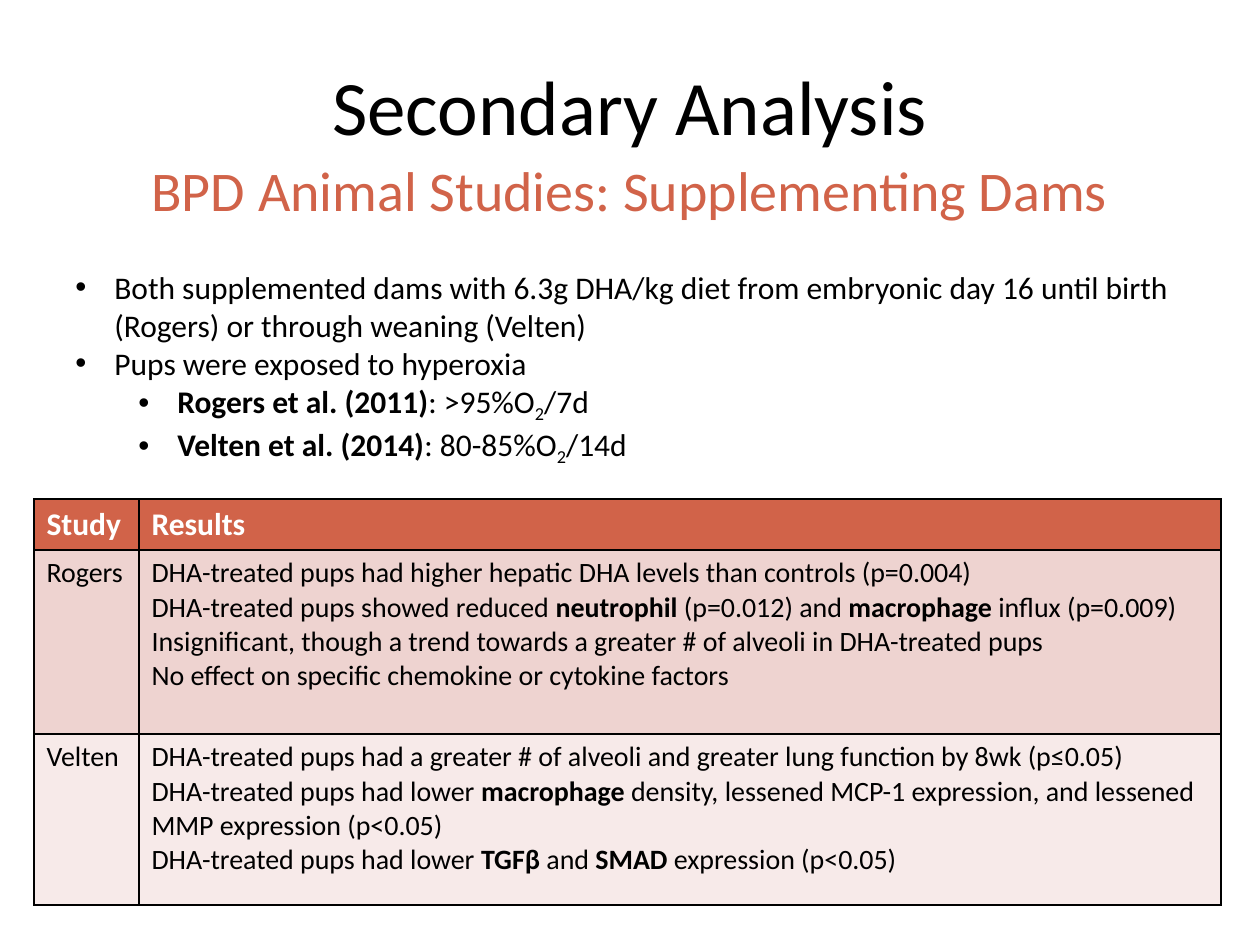
"""Build the Secondary Analysis slide on supplementing dams in BPD animal studies."""
from dataclasses import dataclass

from lxml.etree import SubElement
from pptx import Presentation
from pptx.dml.color import RGBColor
from pptx.enum.text import MSO_ANCHOR as Anchor, PP_ALIGN as Align
from pptx.oxml.ns import qn
from pptx.util import Emu, Pt

EMU_PER_PX = 914400 / 126
FONT = "Calibri"
BLACK = RGBColor(0x00, 0x00, 0x00)
WHITE = RGBColor(0xFF, 0xFF, 0xFF)
RUST = RGBColor(0xD1, 0x63, 0x49)
ROSE = RGBColor(0xEE, 0xD3, 0xD0)
BLUSH = RGBColor(0xF7, 0xEA, 0xE9)


@dataclass(frozen=True)
class Span:
    text: str
    bold: bool = False
    subscript: bool = False


@dataclass(frozen=True)
class Style:
    size: int
    color: RGBColor = BLACK
    align: Align = Align.LEFT


@dataclass(frozen=True)
class Box:
    left: int
    top: int
    width: int
    height: int


@dataclass(frozen=True)
class Line:
    spans: tuple[Span, ...]
    level: int = 0


@dataclass(frozen=True)
class Row:
    height: int
    fill: RGBColor
    style: Style
    study: Line
    results: tuple[Line, ...]


def px(length: int) -> Emu:
    return Emu(round(length * EMU_PER_PX))


def plain(text: str) -> Line:
    return Line((Span(text),))


def bold(text: str) -> Line:
    return Line((Span(text, bold=True),))


def exposure(study: str, oxygen: str, days: str) -> Line:
    spans = (Span(study, bold=True), Span(f": {oxygen}O"), Span("2", subscript=True), Span(f"/{days}"))
    return Line(spans, level=1)


TITLE = Box(63, 39, 1134, 131)
SUBTITLE = Box(63, 149, 1134, 87)
METHODS = Box(63, 262, 1134, 204)
TABLE = Box(34, 499, 1187, 406)
COLUMN_WIDTHS = (105, 1082)
BULLET_HANG = 39
LEVEL_INDENT = 63

METHOD_LINES = (
    plain("Both supplemented dams with 6.3g DHA/kg diet from embryonic day 16 until birth "
          "(Rogers) or through weaning (Velten)"),
    plain("Pups were exposed to hyperoxia"),
    exposure("Rogers et al. (2011)", ">95%", "7d"),
    exposure("Velten et al. (2014)", "80-85%", "14d"),
)

ROWS = (
    Row(51, RUST, Style(18, WHITE), bold("Study"), (bold("Results"),)),
    Row(184, ROSE, Style(16), plain("Rogers"), (
        plain("DHA-treated pups had higher hepatic DHA levels than controls (p=0.004)"),
        Line((Span("DHA-treated pups showed reduced "), Span("neutrophil ", bold=True),
              Span("(p=0.012) and "), Span("macrophage", bold=True), Span(" influx (p=0.009)"))),
        plain("Insignificant, though a trend towards a greater # of alveoli in DHA-treated pups"),
        plain("No effect on specific chemokine or cytokine factors"),
    )),
    Row(171, BLUSH, Style(16), plain("Velten"), (
        plain("DHA-treated pups had a greater # of alveoli and greater lung function by 8wk (p≤0.05)"),
        Line((Span("DHA-treated pups had lower "), Span("macrophage", bold=True),
              Span(" density, lessened MCP-1 expression, and lessened MMP expression (p<0.05)"))),
        Line((Span("DHA-treated pups had lower "), Span("TGFβ", bold=True), Span(" and "),
              Span("SMAD", bold=True), Span(" expression (p<0.05)"))),
    )),
)


def add_bullet(paragraph, level: int) -> None:
    paragraph.level = level
    properties = paragraph._p.get_or_add_pPr()
    properties.set("marL", str(px(BULLET_HANG + level * LEVEL_INDENT)))
    properties.set("indent", str(-px(BULLET_HANG)))
    SubElement(properties, qn("a:buFont"), typeface="Arial")
    SubElement(properties, qn("a:buChar"), char="•")


def write_lines(frame, lines: tuple[Line, ...], style: Style, bulleted: bool = False) -> None:
    for index, line in enumerate(lines):
        paragraph = frame.add_paragraph() if index else frame.paragraphs[0]
        paragraph.alignment = style.align
        if bulleted:
            add_bullet(paragraph, line.level)
        for span in line.spans:
            run = paragraph.add_run()
            run.text = span.text
            run.font.name = FONT
            run.font.size = Pt(style.size)
            run.font.bold = span.bold
            run.font.color.rgb = style.color
            if span.subscript:
                run._r.get_or_add_rPr().set("baseline", "-25000")


def add_text(slide, box: Box, lines: tuple[Line, ...], style: Style,
             anchor: Anchor = Anchor.TOP, bulleted: bool = False) -> None:
    shape = slide.shapes.add_textbox(px(box.left), px(box.top), px(box.width), px(box.height))
    shape.text_frame.word_wrap = True
    shape.text_frame.vertical_anchor = anchor
    write_lines(shape.text_frame, lines, style, bulleted)


def add_borders(cell) -> None:
    properties = cell._tc.get_or_add_tcPr()
    for side in ("lnL", "lnR", "lnT", "lnB"):
        border = SubElement(properties, qn(f"a:{side}"), w=str(Pt(1)))
        fill = SubElement(border, qn("a:solidFill"))
        SubElement(fill, qn("a:srgbClr"), val=str(BLACK))


def add_results_table(slide) -> None:
    frame = slide.shapes.add_table(len(ROWS), len(COLUMN_WIDTHS), px(TABLE.left), px(TABLE.top),
                                   px(TABLE.width), px(TABLE.height))
    table = frame.table
    for column, width in zip(table.columns, COLUMN_WIDTHS):
        column.width = px(width)
    for table_row, row in zip(table.rows, ROWS):
        table_row.height = px(row.height)
        for cell, lines in zip(table_row.cells, ((row.study,), row.results)):
            add_borders(cell)
            cell.fill.solid()
            cell.fill.fore_color.rgb = row.fill
            write_lines(cell.text_frame, lines, row.style)


def main() -> None:
    presentation = Presentation()
    presentation.slide_width = px(1260)
    presentation.slide_height = px(945)
    slide = presentation.slides.add_slide(presentation.slide_layouts[6])
    add_text(slide, TITLE, (plain("Secondary Analysis"),), Style(44, align=Align.CENTER), Anchor.MIDDLE)
    add_text(slide, SUBTITLE, (plain("BPD Animal Studies: Supplementing Dams"),),
             Style(32, RUST, Align.CENTER))
    add_results_table(slide)
    add_text(slide, METHODS, METHOD_LINES, Style(18), bulleted=True)
    presentation.save("out.pptx")


if __name__ == "__main__":
    main()
